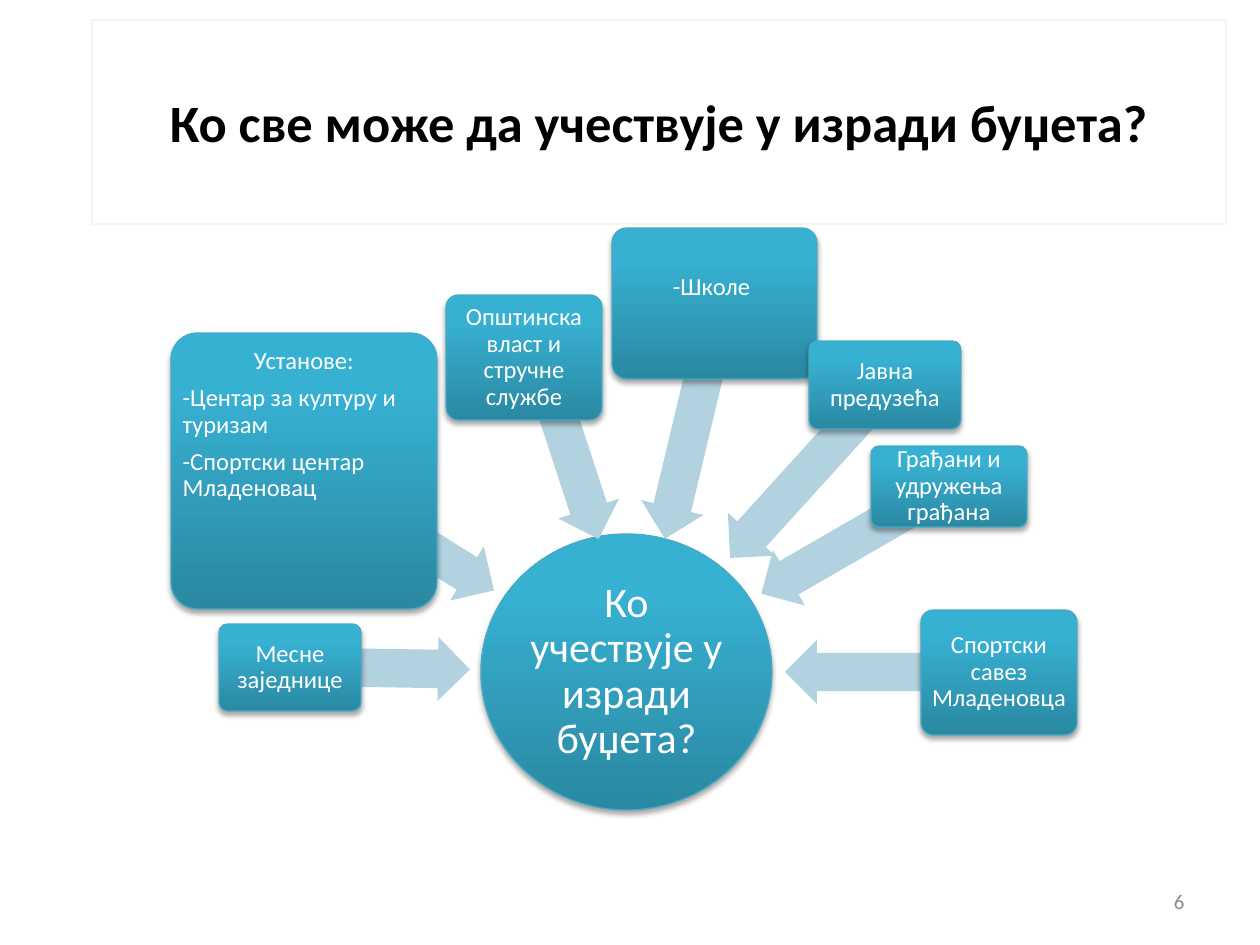
import lxml.etree
import pptx
import pptx.dml.color
import pptx.enum.shapes
import pptx.enum.text
import pptx.oxml.ns
import pptx.util

PIXELS_PER_INCH = 126
ARROW_HEIGHT = 64
SHAPES = pptx.enum.shapes.MSO_SHAPE
ALIGN = pptx.enum.text.PP_ALIGN
ANCHOR = pptx.enum.text.MSO_ANCHOR

PARTICIPANTS = [
    {"arrow": (290, 636, 180, 180.9), "box": (219, 624, 142, 87),
     "lines": ["Месне заједнице"]},
    {"arrow": (287, 499, 224, 212), "box": (171, 333, 266, 276),
     "lines": ["Установе:", "-Центар за културу и туризам",
               "-Спортски центар Младеновац"],
     "insets": (4, 8, 4, 4), "anchor": ANCHOR.TOP},
    {"arrow": (480, 421, 181, 251.9), "box": (446, 295, 156, 125),
     "lines": ["Општинска власт и стручне службе"]},
    {"arrow": (572, 389, 242, 283.4), "box": (612, 228, 205, 151),
     "lines": ["-Школе"], "insets": (4, 4, 10, 36)},
    {"arrow": (692, 440, 232, 312.2), "box": (809, 341, 152, 88),
     "lines": ["Јавна предузећа"]},
    {"arrow": (747, 508, 215, 330), "box": (871, 446, 156, 81),
     "lines": ["Грађани и удружења грађана"]},
    {"arrow": (785, 640, 214, 0), "box": (921, 610, 156, 125),
     "lines": ["Спортски савез Младеновца"]},
]


def px(length):
    return pptx.util.Emu(round(length * 914400 / PIXELS_PER_INCH))


def colour(value):
    return pptx.dml.color.RGBColor.from_string(value)


def add_run(paragraph, text, size, value, bold=False):
    run = paragraph.add_run()
    run.text = text
    run.font.name = "Calibri"
    run.font.size = pptx.util.Pt(size)
    run.font.bold = bold
    run.font.color.rgb = colour(value)


def set_insets(frame, left, top, right, bottom):
    frame.margin_left, frame.margin_top = px(left), px(top)
    frame.margin_right, frame.margin_bottom = px(right), px(bottom)


def add_shadow(shape):
    shape.shadow.inherit = False
    effects = shape._element.spPr.find(pptx.oxml.ns.qn("a:effectLst"))
    shadow = lxml.etree.SubElement(
        effects, pptx.oxml.ns.qn("a:outerShdw"),
        blurRad="39370", dist="22860", dir="5400000", rotWithShape="0")
    black = lxml.etree.SubElement(shadow, pptx.oxml.ns.qn("a:srgbClr"), val="000000")
    lxml.etree.SubElement(black, pptx.oxml.ns.qn("a:alpha"), val="35000")


def add_gradient(shape):
    shape.fill.gradient()
    shape.fill.gradient_angle = 90
    stops = shape.fill.gradient_stops
    for stop, position, value in zip(stops, (0, 0.8), ("2A88A2", "37B1D2")):
        stop.position = position
        stop.color.rgb = colour(value)


def add_node(slide, kind, box, lines, size, insets=(4, 4, 4, 4), anchor=ANCHOR.MIDDLE):
    shape = slide.shapes.add_shape(kind, *map(px, box))
    if kind == SHAPES.ROUNDED_RECTANGLE:
        shape.adjustments[0] = 0.1
    add_gradient(shape)
    shape.line.color.rgb = colour("46AAC5")
    shape.line.width = pptx.util.Pt(0.75)
    add_shadow(shape)
    frame = shape.text_frame
    frame.word_wrap = True
    frame.vertical_anchor = anchor
    set_insets(frame, *insets)
    for index, text in enumerate(lines):
        paragraph = frame.add_paragraph() if index else frame.paragraphs[0]
        paragraph.alignment = ALIGN.LEFT if index else ALIGN.CENTER
        paragraph.line_spacing = 0.9
        paragraph.space_after = pptx.util.Pt(6)
        add_run(paragraph, text, size, "FFFFFF")


def add_arrow(slide, left, top, length, rotation):
    arrow = slide.shapes.add_shape(
        SHAPES.LEFT_ARROW, px(left), px(top), px(length), px(ARROW_HEIGHT))
    arrow.adjustments[0] = 0.6
    arrow.adjustments[1] = 0.5
    arrow.rotation = rotation
    arrow.shadow.inherit = False
    arrow.fill.solid()
    arrow.fill.fore_color.rgb = colour("B2D2DF")
    arrow.line.fill.background()


def add_title(slide, text):
    title = slide.shapes.title
    title.left, title.top, title.width, title.height = map(px, (92, 20, 1134, 204))
    title.line.color.rgb = colour("F5F4ED")
    title.line.width = pptx.util.Pt(0.75)
    title.text_frame.vertical_anchor = ANCHOR.MIDDLE
    paragraph = title.text_frame.paragraphs[0]
    paragraph.alignment = ALIGN.CENTER
    add_run(paragraph, text, 30, "000000", bold=True)


def add_slide_number(slide, text):
    number = slide.shapes.add_textbox(*map(px, (903, 876, 294, 50)))
    number.text_frame.word_wrap = True
    number.text_frame.vertical_anchor = ANCHOR.MIDDLE
    paragraph = number.text_frame.paragraphs[0]
    paragraph.alignment = ALIGN.RIGHT
    add_run(paragraph, text, 12, "8C8C8C")


def main():
    presentation = pptx.Presentation()
    presentation.slide_width = px(1260)
    presentation.slide_height = px(945)
    slide = presentation.slides.add_slide(presentation.slide_layouts[5])
    add_title(slide, "Ко све може да учествује у изради буџета?")
    add_slide_number(slide, "6")
    add_node(slide, SHAPES.OVAL, (481, 534, 291, 276),
             ["Ко учествује у изради буџета?"], 24, insets=(2, 2, 2, 2))
    for participant in PARTICIPANTS:
        add_arrow(slide, *participant["arrow"])
        add_node(slide, SHAPES.ROUNDED_RECTANGLE, participant["box"],
                 participant["lines"], 14,
                 participant.get("insets", (4, 4, 4, 4)),
                 participant.get("anchor", ANCHOR.MIDDLE))
    presentation.save("out.pptx")


if __name__ == "__main__":
    main()
